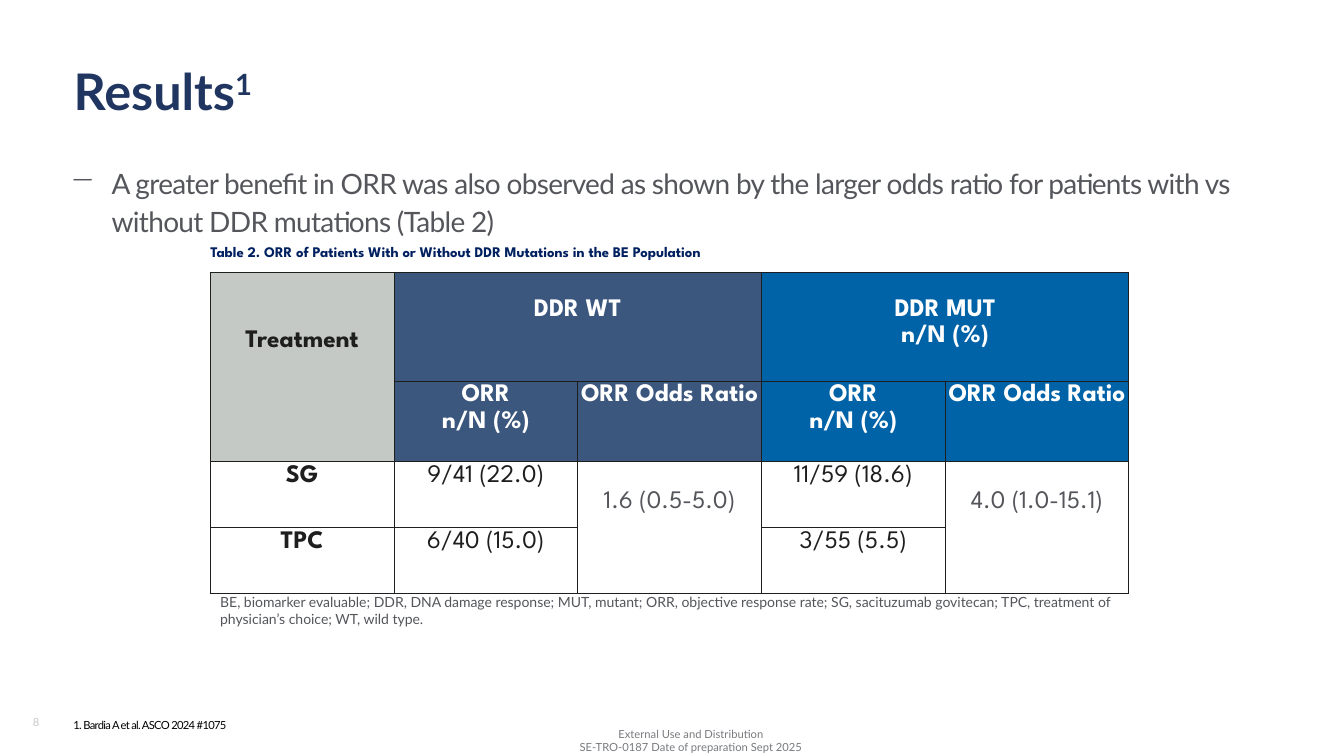
from pptx import Presentation
from pptx import util as u
from pptx.dml.color import RGBColor
from pptx.enum import text
from pptx.oxml import parse_xml
from pptx.oxml.ns import nsdecls

HUES = {"navy": "203661", "cap": "002060", "slate": "54565B", "foot": "787A7E",
        "pale": "C6CAC6", "ink": "1E1E1E", "black": "000000", "white": "FFFFFF",
        "grey": "C5C9C5", "wild": "3B577E", "mut": "0063A8"}
LATO, SPARTAN = "Lato", "League Spartan"
LEFT, MID, TOP = text.PP_ALIGN.LEFT, text.PP_ALIGN.CENTER, text.MSO_ANCHOR.TOP
CENTRE = text.MSO_ANCHOR.MIDDLE


class Deck:
    """Style and current slide."""

    def __init__(self):
        self.prs = Presentation()
        self.prs.slide_width, self.prs.slide_height = u.Cm(33.87), u.Cm(19.05)
        self.slide = self.prs.slides.add_slide(self.prs.slide_layouts[1])

    def run(self, para, words, size, hue, font=LATO, bold=False, gap=0, base=0):
        run = para.add_run()
        run.text = words
        run.font.size, run.font.name, run.font.bold = u.Pt(size), font, bold
        run.font.color.rgb = RGBColor.from_string(HUES[hue])
        props = run._r.get_or_add_rPr()
        if gap:
            props.set("spc", str(int(gap * 100)))
        if base:
            props.set("baseline", str(base * 1000))

    def place(self, shape, x, y, w, h):
        shape.left, shape.top = u.Cm(x), u.Cm(y)
        shape.width, shape.height = u.Cm(w), u.Cm(h)
        shape.text_frame.auto_size = text.MSO_AUTO_SIZE.NONE
        return shape.text_frame

    def title(self, words, note, *at):
        frame = self.place(self.slide.shapes.title, *at)
        frame.vertical_anchor = text.MSO_ANCHOR.BOTTOM
        para = frame.paragraphs[0]
        para.alignment, para.line_spacing = LEFT, 0.8
        self.run(para, words, 36, "navy", bold=True)
        self.run(para, note, 36, "navy", bold=True, base=30)

    def body(self, words, *at):
        para = self.place(self.slide.placeholders[1], *at).paragraphs[0]
        para.line_spacing, para.space_after, para.space_before = 1.14, u.Pt(6), u.Pt(0)
        props = para._p.get_or_add_pPr()
        props.set("marL", str(u.Cm(0.96)))
        props.set("indent", str(-u.Cm(0.96)))
        for part in (f'<a:buClr {nsdecls("a")}><a:srgbClr val="{HUES["slate"]}"/></a:buClr>',
                     f'<a:buSzPct {nsdecls("a")} val="65000"/>',
                     f'<a:buChar {nsdecls("a")} char="⎻"/>'):
            props.append(parse_xml(part))
        self.run(para, words, 20, "slate", gap=-0.5)

    def box(self, lines, at, size, hue, align=LEFT, anchor=TOP, inset=None, **style):
        frame = self.place(self.slide.shapes.add_textbox(0, 0, 0, 0), *at)
        frame.word_wrap, frame.vertical_anchor = True, anchor
        if inset is not None:
            frame.margin_left = frame.margin_right = frame.margin_bottom = 0
            frame.margin_top = u.Cm(inset)
        for i, line in enumerate(lines):
            para = frame.paragraphs[0] if i == 0 else frame.add_paragraph()
            para.alignment = align
            self.run(para, line, size, hue, **style)

    def table(self, x, y, wide, rows, spans):
        shape = self.slide.shapes.add_table(len(rows), len(wide), u.Cm(x), u.Cm(y),
                                            u.Cm(sum(wide)), u.Cm(sum(rows)))
        grid = shape.table
        grid.first_row = grid.horz_banding = False
        for col, w in zip(grid.columns, wide):
            col.width = u.Cm(w)
        for row, h in zip(grid.rows, rows):
            row.height = u.Cm(h)
        for cell in grid.iter_cells():
            self.edge(cell)
        for r, c, down, over in spans:
            grid.cell(r, c).merge(grid.cell(r + down - 1, c + over - 1))
        return grid

    def edge(self, cell):
        for side in "LRTB":
            cell._tc.get_or_add_tcPr().append(parse_xml(
                f'<a:ln{side} {nsdecls("a")} w="9525"><a:solidFill>'
                f'<a:srgbClr val="{HUES["ink"]}"/></a:solidFill></a:ln{side}>'))
        cell.fill.background()

    def cell(self, cell, lines, hue, bold=False, fill=None, top=0.08):
        cell.margin_left = cell.margin_right = cell.margin_bottom = 0
        cell.margin_top = u.Cm(top)
        if fill:
            cell.fill.solid()
            cell.fill.fore_color.rgb = RGBColor.from_string(HUES[fill])
        for i, line in enumerate(lines):
            para = cell.text_frame.paragraphs[0] if i == 0 else cell.text_frame.add_paragraph()
            para.alignment = MID
            if i:
                para.space_before = u.Pt(2.2)
            self.run(para, line, 18, hue, SPARTAN, bold)


def main():
    deck = Deck()

    # Heading and message
    deck.title("Results", "1", 1.6, 0.41, 30.48, 2.74)
    deck.body("A greater benefit in ORR was also observed as shown by the larger odds "
              "ratio for patients with vs without DDR mutations (Table 2)",
              1.6, 3.94, 30.48, 12.29)

    # Table frame: the treatment and odds ratio cells span two rows
    grid = deck.table(5.3, 6.87, [4.63] * 5, [2.73, 2.04, 1.66, 1.66],
                      [(0, 0, 2, 1), (0, 1, 1, 2), (0, 3, 1, 2), (2, 2, 2, 1), (2, 4, 2, 1)])
    deck.cell(grid.cell(0, 0), ["Treatment"], "ink", True, "grey", 1.44)

    # One pair of columns per mutation group
    groups = [(1, "wild", ["DDR WT"], ["9/41 (22.0)", "6/40 (15.0)"], "1.6 (0.5-5.0)"),
              (3, "mut", ["DDR MUT", "n/N (%)"], ["11/59 (18.6)", "3/55 (5.5)"],
               "4.0 (1.0-15.1)")]
    for col, fill, head, rates, odds in groups:
        deck.cell(grid.cell(0, col), head, "white", True, fill, 0.66)
        deck.cell(grid.cell(1, col), ["ORR", "n/N (%)"], "white", True, fill)
        deck.cell(grid.cell(1, col + 1), ["ORR Odds Ratio"], "white", True, fill)
        for row, rate in enumerate(rates, 2):
            deck.cell(grid.cell(row, col), [rate], "ink")
        deck.cell(grid.cell(2, col + 1), [odds], "slate", top=0.74)
    for row, drug in enumerate(["SG", "TPC"], 2):
        deck.cell(grid.cell(row, 0), [drug], "ink", True)

    # Table caption and key
    deck.box(["Table 2. ORR of Patients With or Without DDR Mutations in the BE Population"],
             (5.3, 6.07, 13.64, 0.51), 10.5, "cap", inset=0.05, font=SPARTAN, bold=True)
    deck.box(["BE, biomarker evaluable; DDR, DNA damage response; MUT, mutant; ORR, objective "
              "response rate; SG, sacituzumab govitecan; TPC, treatment of physician’s choice; "
              "WT, wild type."], (5.3, 14.83, 22.94, 1.12), 10, "slate")

    # Foot of the slide
    deck.box(["8"], (0.58, 17.78, 7.62, 0.81), 8, "pale", anchor=CENTRE)
    deck.box(["1. Bardia A et al. ASCO 2024 #1075"], (1.6, 17.98, 16.94, 0.61), 8, "black",
             gap=-0.5)
    deck.box(["External Use and Distribution", "SE-TRO-0187 Date of preparation Sept 2025"],
             (13.06, 18.26, 8.71, 0.81), 8, "foot", MID, CENTRE)

    deck.prs.save("out.pptx")


if __name__ == "__main__":
    main()
